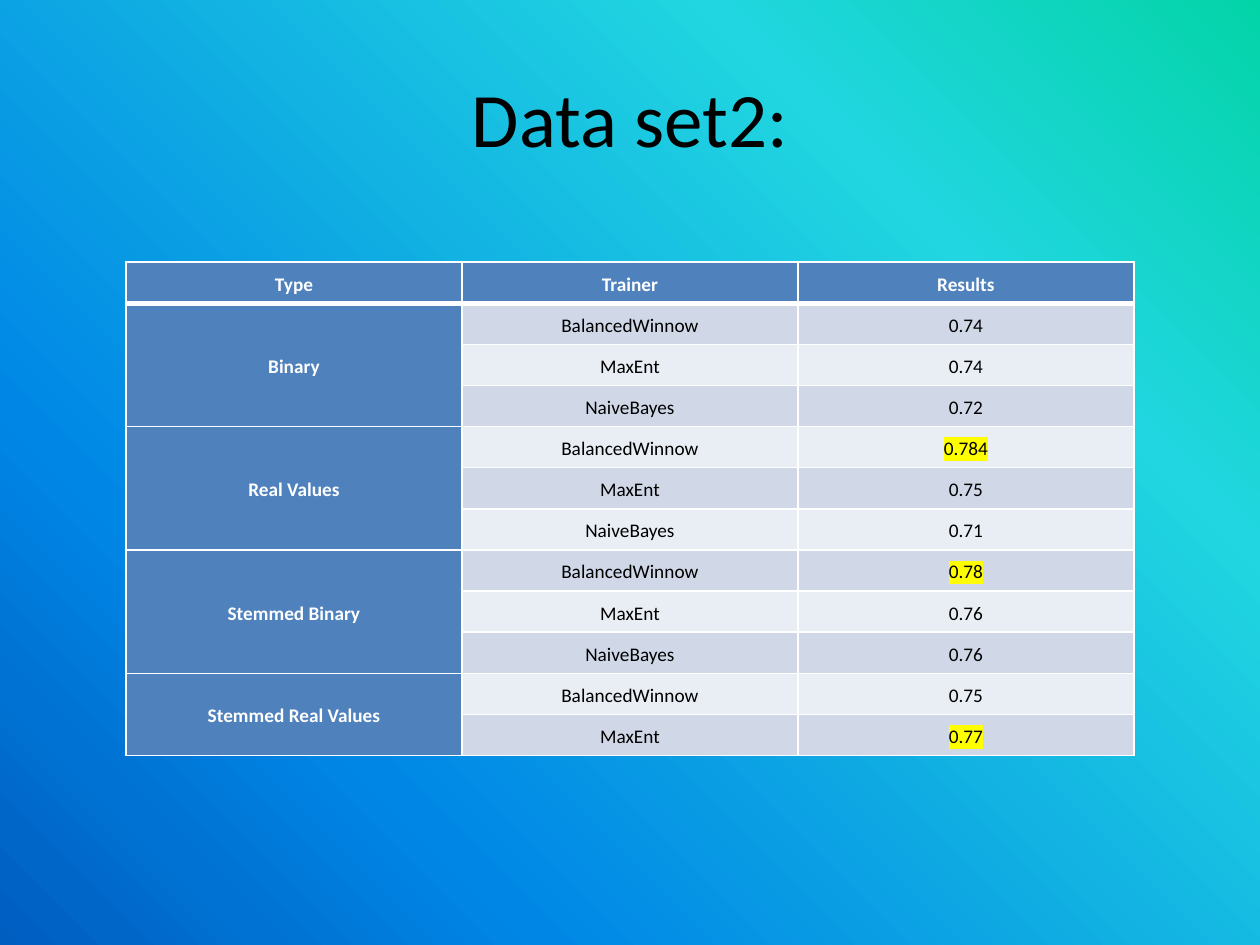
from lxml import etree
from pptx import Presentation
from pptx.dml.color import RGBColor
from pptx.enum import text
from pptx.oxml import ns
from pptx.util import Inches, Pt

# Content
TITLE = "Data set2:"
HEADER = ("Type", "Trainer", "Results")
GROUPS = [
    ("Binary", [("BalancedWinnow", "0.74"), ("MaxEnt", "0.74"), ("NaiveBayes", "0.72")]),
    ("Real Values", [("BalancedWinnow", "0.784"), ("MaxEnt", "0.75"), ("NaiveBayes", "0.71")]),
    ("Stemmed Binary", [("BalancedWinnow", "0.78"), ("MaxEnt", "0.76"), ("NaiveBayes", "0.76")]),
    ("Stemmed Real Values", [("BalancedWinnow", "0.75"), ("MaxEnt", "0.77")]),
]
HIGHLIGHTED = {"0.784", "0.78", "0.77"}

# Style
FONT = "Calibri"
BLACK, WHITE, YELLOW = "000000", "FFFFFF", "FFFF00"
HEAD_FILL, BANDS = "4F81BD", ("D0D8E8", "E9EDF4")
BACKGROUND = [(0, "03D4A8"), (25, "21D6E0"), (75, "0087E6"), (88, "0072D3"), (94, "0067C9"),
              (97, "0062C4"), (98, "005FC2"), (99, "005EC1"), (100, "005CBF")]


def add_xml(parent, tag, **attrs):
    return etree.SubElement(parent, ns.qn(tag), attrs)


def style_run(r, size, color, bold=False):
    r.font.size, r.font.name, r.font.bold = Pt(size), FONT, bold
    r.font.color.rgb = RGBColor.from_string(color)


def highlight(r, color):
    mark = etree.Element(ns.qn("a:highlight"))
    add_xml(mark, "a:srgbClr", val=color)
    r.font.fill._xPr.find(ns.qn("a:solidFill")).addnext(mark)


def set_borders(cell, top=1, bottom=1):
    tcPr = cell._tc.get_or_add_tcPr()
    for side, width in (("L", 1), ("R", 1), ("T", top), ("B", bottom)):
        line = add_xml(tcPr, "a:ln" + side, w=str(Pt(width)))
        add_xml(add_xml(line, "a:solidFill"), "a:srgbClr", val=WHITE)


def fill_cell(cell, words, fill, color, bold=False):
    cell.fill.solid()
    cell.fill.fore_color.rgb = RGBColor.from_string(fill)
    cell.vertical_anchor = text.MSO_ANCHOR.MIDDLE
    cell.margin_left = cell.margin_right = Inches(0.07)
    cell.margin_top = cell.margin_bottom = 0
    p = cell.text_frame.paragraphs[0]
    p.text = words
    p.alignment, p.line_spacing = text.PP_ALIGN.CENTER, 1.15
    style_run(p.runs[0], 11, color, bold)
    if words in HIGHLIGHTED:
        highlight(p.runs[0], YELLOW)


prs = Presentation()
prs.slide_width, prs.slide_height = Inches(10), Inches(7.5)
s = prs.slides.add_slide(prs.slide_layouts[5])

# Background gradient, from top right to bottom left
bg = s.background.fill
bg.gradient()
bg.gradient_angle = 225
stops = next(s._element.iter(ns.qn("a:gsLst")))
for stop in list(stops):
    stops.remove(stop)
for percent, color in BACKGROUND:
    add_xml(add_xml(stops, "a:gs", pos=str(percent * 1000)), "a:srgbClr", val=color)

# Title
title = s.shapes.title
title.left, title.top, title.width, title.height = map(Inches, (0.5, 0.3, 9, 1.25))
tf = title.text_frame
tf.text = TITLE
tf.vertical_anchor = text.MSO_ANCHOR.MIDDLE
tf.paragraphs[0].alignment = text.PP_ALIGN.CENTER
style_run(tf.paragraphs[0].runs[0], 44, BLACK)

# Table
n_rows = 1 + sum(len(rows) for _, rows in GROUPS)
table = s.shapes.add_table(n_rows, len(HEADER), Inches(1), Inches(2.08),
                           Inches(8), Inches(3.92)).table
for i in range(n_rows):
    for j in range(len(HEADER)):
        set_borders(table.cell(i, j), top=3 if i == 1 else 1, bottom=3 if i == 0 else 1)

for j, words in enumerate(HEADER):
    fill_cell(table.cell(0, j), words, HEAD_FILL, WHITE, bold=True)

# One merged type cell beside each group of results
i = 1
for name, rows in GROUPS:
    table.cell(i, 0).merge(table.cell(i + len(rows) - 1, 0))
    fill_cell(table.cell(i, 0), name, HEAD_FILL, WHITE, bold=True)
    for row in rows:
        for j, words in enumerate(row, start=1):
            fill_cell(table.cell(i, j), words, BANDS[(i - 1) % 2], BLACK)
        i += 1

prs.save("out.pptx")
